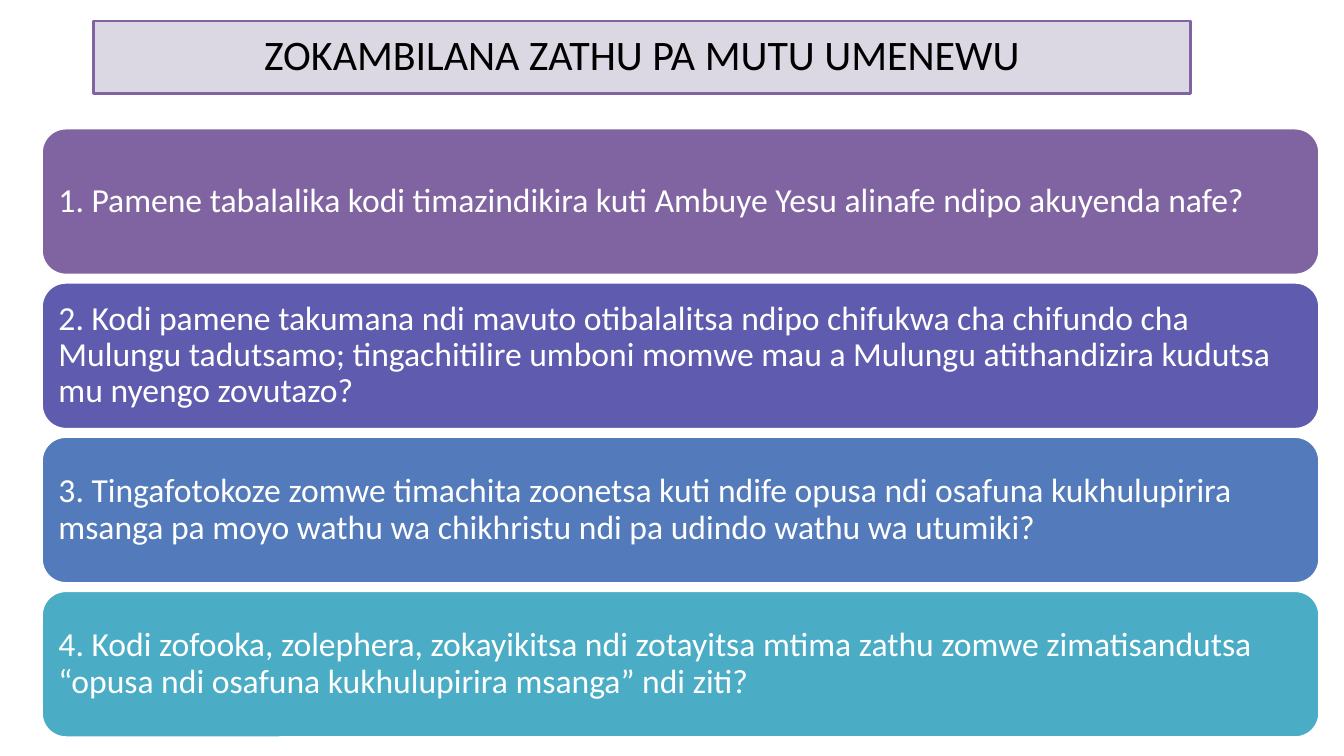
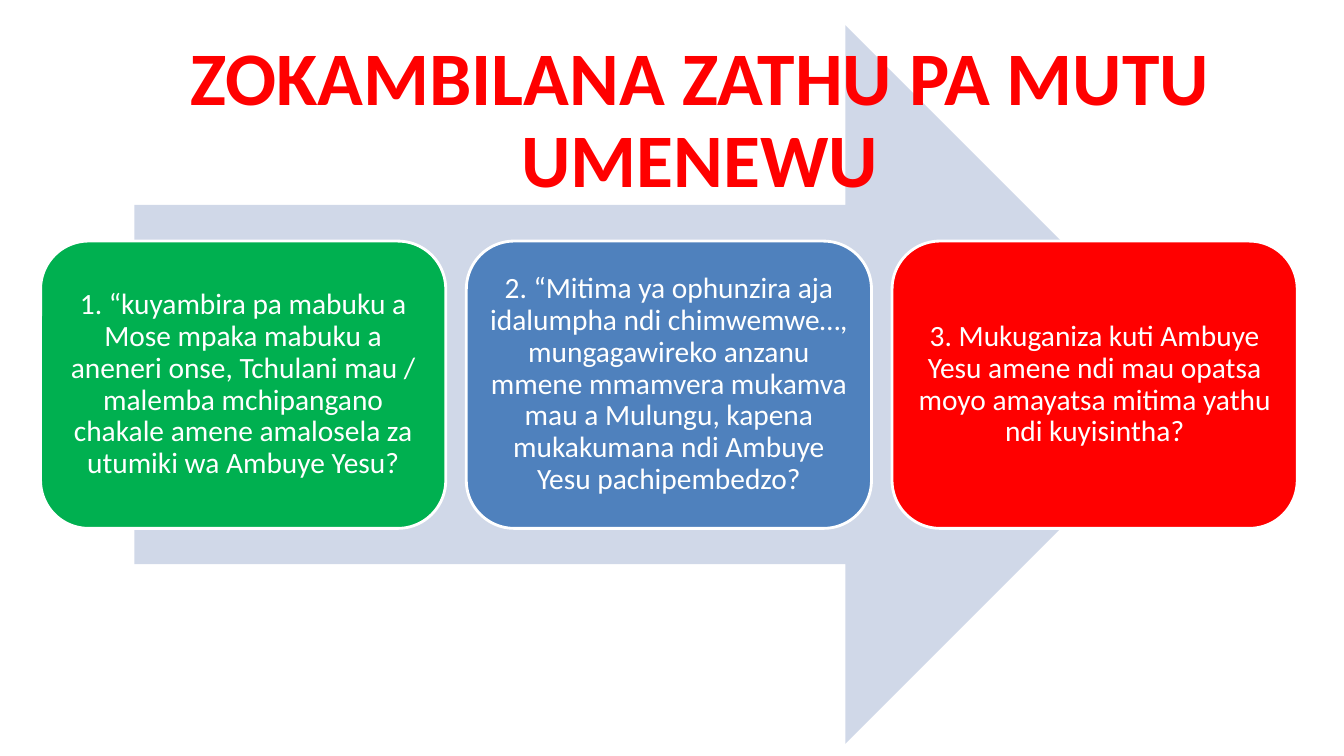
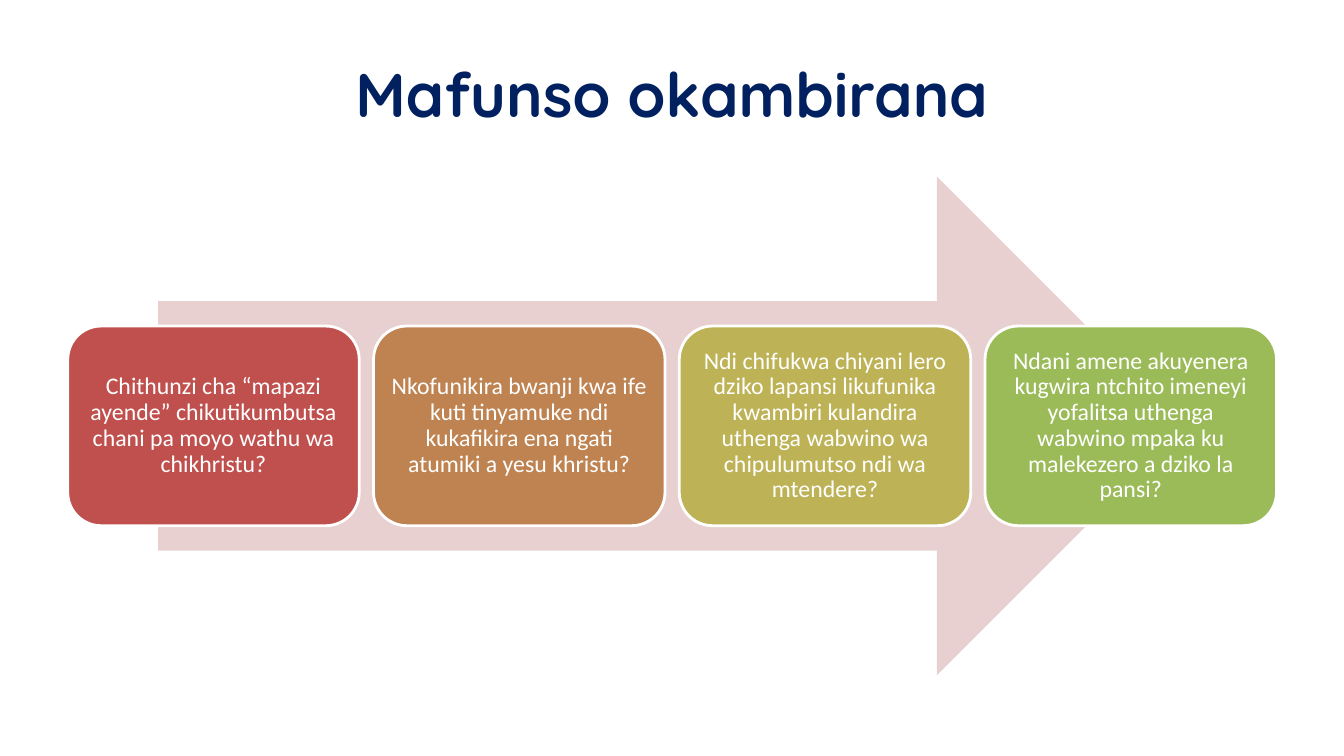
from dataclasses import dataclass

from lxml.etree import SubElement
from pptx import Presentation
from pptx.dml.color import RGBColor
from pptx.enum.shapes import MSO_SHAPE as Shape
from pptx.enum.text import MSO_ANCHOR as Anchor, PP_ALIGN as Align
from pptx.oxml.ns import qn
from pptx.util import Pt


@dataclass(frozen=True)
class Theme:
    body_font: str = "Calibri"
    title_font: str = "Quicksand"
    white: str = "FFFFFF"
    black: str = "000000"
    red: str = "FF0000"
    navy: str = "002060"
    purple: str = "8064A2"
    lilac: str = "D8D3E0"
    pale_blue: str = "D0D8E8"
    pale_rose: str = "E8D0D0"
    banner_size: int = 30
    headline_size: int = 54
    title_size: int = 44
    row_size: int = 24
    wide_card_size: int = 21
    narrow_card_size: int = 17
    outline: int = 2
    tight: float = 0.9


THEME = Theme()

# Content: (text, fill)
TOPIC = "ZOKAMBILANA ZATHU PA MUTU UMENEWU"
QUESTIONS_TITLE = "Mafunso okambirana"
ROWS = [
    ("1. Pamene tabalalika kodi timazindikira kuti Ambuye Yesu alinafe ndipo "
     "akuyenda nafe?", THEME.purple),
    ("2. Kodi pamene takumana ndi mavuto otibalalitsa ndipo chifukwa cha chifundo "
     "cha Mulungu tadutsamo; tingachitilire umboni momwe mau a Mulungu "
     "atithandizira kudutsa mu nyengo zovutazo?", "5F5BAE"),
    ("3. Tingafotokoze zomwe timachita zoonetsa kuti ndife opusa ndi osafuna "
     "kukhulupirira msanga pa moyo wathu wa chikhristu ndi pa udindo wathu wa "
     "utumiki?", "537ABA"),
    ("4. Kodi zofooka, zolephera, zokayikitsa ndi zotayitsa mtima zathu zomwe "
     "zimatisandutsa “opusa ndi osafuna kukhulupirira msanga” ndi ziti?", "4BACC6"),
]
WIDE_CARDS = [
    ("1. “kuyambira pa mabuku a Mose mpaka mabuku a aneneri onse, Tchulani mau / "
     "malemba mchipangano chakale amene amalosela za utumiki wa Ambuye Yesu?",
     "00B050"),
    ("2. “Mitima ya ophunzira aja idalumpha ndi chimwemwe…, mungagawireko anzanu "
     "mmene mmamvera mukamva mau a Mulungu, kapena mukakumana ndi Ambuye Yesu "
     "pachipembedzo?", "4F81BD"),
    ("3. Mukuganiza kuti Ambuye Yesu amene ndi mau opatsa moyo amayatsa mitima "
     "yathu ndi kuyisintha?", THEME.red),
]
NARROW_CARDS = [
    ("Chithunzi cha “mapazi ayende” chikutikumbutsa chani pa moyo wathu wa "
     "chikhristu?", "C0504D"),
    ("Nkofunikira bwanji kwa ife kuti tinyamuke ndi kukafikira ena ngati atumiki "
     "a yesu khristu?", "BE8351"),
    ("Ndi chifukwa chiyani lero dziko lapansi likufunika kwambiri kulandira "
     "uthenga wabwino wa chipulumutso ndi wa mtendere?", "BDB255"),
    ("Ndani amene akuyenera kugwira ntchito imeneyi yofalitsa uthenga wabwino "
     "mpaka ku malekezero a dziko la pansi?", "9BBB59"),
]


# Building blocks; every area is (left, top, width, height) in points
def add_box(page, kind, area, fill, line=None):
    box = page.shapes.add_shape(kind, *map(Pt, area))
    box.shadow.inherit = False
    box.fill.solid()
    box.fill.fore_color.rgb = RGBColor.from_string(fill)
    if line:
        box.line.color.rgb = RGBColor.from_string(line)
        box.line.width = Pt(THEME.outline)
    else:
        box.line.fill.background()
    return box


def write(box, text, size, color, inset, align=Align.CENTER, bold=False,
          font=THEME.body_font, spacing=THEME.tight):
    frame = box.text_frame
    frame.word_wrap = True
    frame.vertical_anchor = Anchor.MIDDLE
    frame.margin_left = frame.margin_right = Pt(inset)
    frame.margin_top = frame.margin_bottom = Pt(inset)
    frame.text = text
    para = frame.paragraphs[0]
    para.alignment = align
    para.line_spacing = spacing
    para.font.name = font
    para.font.size = Pt(size)
    para.font.bold = bold
    para.font.color.rgb = RGBColor.from_string(color)


def add_title(page, area, text, size, color, inset, **style):
    box = page.shapes.add_textbox(*map(Pt, area))
    write(box, text, size, color, inset, bold=True, **style)


def add_cards(page, cards, first, step, size, inset, align=Align.CENTER):
    """Repeat the first area at equal steps (right, down)."""
    left, top, width, height = first
    for index, (text, fill) in enumerate(cards):
        area = (left + index * step[0], top + index * step[1], width, height)
        card = add_box(page, Shape.ROUNDED_RECTANGLE, area, fill, THEME.white)
        write(card, text, size, THEME.white, inset, align)


def set_opacity(box, percent):
    color = box.fill._xPr.find(qn("a:solidFill"))[0]
    SubElement(color, qn("a:alpha"), val=str(percent * 1000))


# Slides
def build_rows(page):
    add_cards(page, ROWS, (29.6, 91.5, 913, 105), (0, 110.15), THEME.row_size, 7.2,
              Align.LEFT)
    banner = add_box(page, Shape.RECTANGLE, (67, 15, 783.4, 52), THEME.lilac,
                     THEME.purple)
    set_opacity(banner, 90)
    write(banner, TOPIC, THEME.banner_size, THEME.black, 8.6)


def build_wide_cards(page):
    add_box(page, Shape.RIGHT_ARROW, (96, 18, 764.5, 513.4), THEME.pale_blue)
    add_cards(page, WIDE_CARDS, (29, 172.2, 289.4, 205.2), (304.1, 0),
              THEME.wide_card_size, 6.5)
    add_title(page, (40.3, 9.4, 919.5, 155.5), TOPIC, THEME.headline_size,
              THEME.red, 8.6)


def build_narrow_cards(page):
    add_title(page, (48, 21.6, 864, 90), QUESTIONS_TITLE, THEME.title_size,
              THEME.navy, 3.6, font=THEME.title_font, spacing=1.0)
    add_box(page, Shape.RIGHT_ARROW, (113, 126, 734.4, 356.4), THEME.pale_rose)
    add_cards(page, NARROW_CARDS, (48.4, 232.9, 208.2, 142.6), (218.4, 0),
              THEME.narrow_card_size, 5)


def main():
    deck = Presentation()
    deck.slide_width, deck.slide_height = Pt(960), Pt(540)
    blank = deck.slide_layouts[6]
    for build in (build_rows, build_wide_cards, build_narrow_cards):
        build(deck.slides.add_slide(blank))
    deck.save("out.pptx")


if __name__ == "__main__":
    main()
